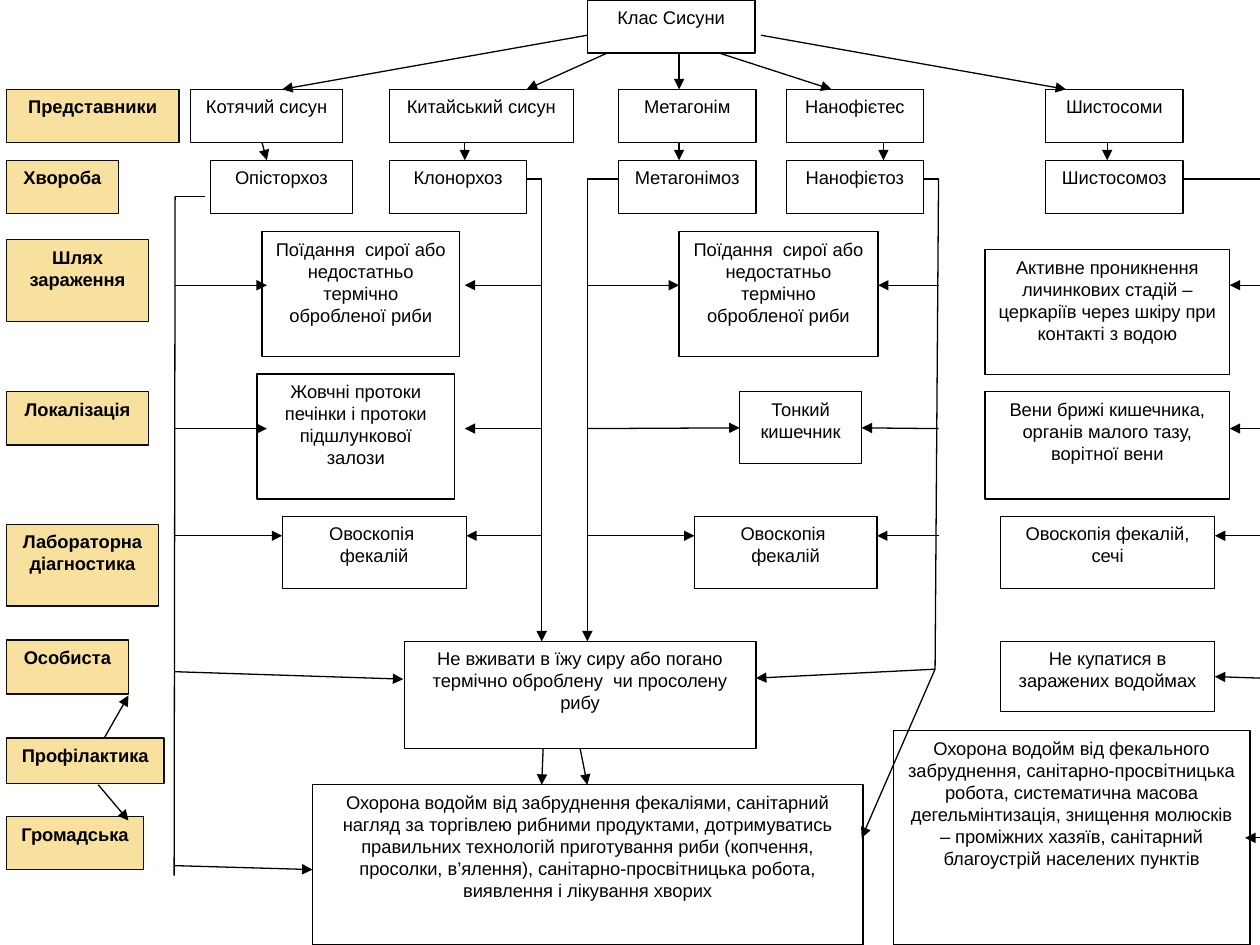
from collections import namedtuple

from lxml import etree
from pptx import Presentation
from pptx import util as u
from pptx.dml import color
from pptx.enum import shapes, text
from pptx.oxml import ns

COLORS = {"paper": "FFFFFF", "label": "F8E19F", "label_line": "0D0D0D", "ink": "000000"}
LINE_WIDTH = u.Pt(0.75)
Box = namedtuple("Box", "left top width height")
Row = namedtuple("Row", "left top width height caption axis tip_left tip_right")


def rgb(name):
    return color.RGBColor.from_string(COLORS[name])


def add_card(page, box, left, top, width, height, caption, label=False):
    card = page.shapes.add_shape(
        shapes.MSO_SHAPE.RECTANGLE,
        u.Cm(box.left + left), u.Cm(box.top + top), u.Cm(width), u.Cm(height))
    card.shadow.inherit = False
    card.fill.solid()
    card.fill.fore_color.rgb = rgb("label" if label else "paper")
    card.line.color.rgb = rgb("label_line" if label else "ink")
    card.line.width = LINE_WIDTH
    frame = card.text_frame
    frame.text = caption
    frame.word_wrap = True
    frame.vertical_anchor = text.MSO_ANCHOR.TOP
    para = frame.paragraphs[0]
    para.alignment = text.PP_ALIGN.CENTER
    for span in para.runs:
        span.font.name = "Arial"
        span.font.size = u.Pt(10.5)
        span.font.bold = label
        span.font.color.rgb = rgb("ink")
    return card


def add_line(page, box, x1, y1, x2, y2, arrow=True):
    line = page.shapes.add_connector(
        shapes.MSO_CONNECTOR.STRAIGHT,
        u.Cm(box.left + x1), u.Cm(box.top + y1), u.Cm(box.left + x2), u.Cm(box.top + y2))
    line.line.color.rgb = rgb("ink")
    line.line.width = LINE_WIDTH
    if arrow:
        stroke = line.line._get_or_add_ln()
        etree.SubElement(stroke, ns.qn("a:tailEnd"), type="triangle")
    etree.SubElement(line._element.spPr, ns.qn("a:effectLst"))
    return line


def draw_header(page, box):
    add_card(page, box, 11.84, 0, 3.38, 1.07, "Клас Сисуни")
    species = [(3.84, 3.07, "Котячий сисун"), (7.85, 3.71, "Китайський сисун"),
               (12.47, 2.77, "Метагонім"), (15.85, 2.77, "Нанофієтес"),
               (21.08, 2.77, "Шистосоми")]
    diseases = [(4.24, 2.87, "Опісторхоз"), (7.85, 2.77, "Клонорхоз"),
                (12.47, 2.77, "Метагонімоз"), (15.85, 2.77, "Нанофієтоз"),
                (21.08, 2.77, "Шистосомоз")]
    for top, cards in ((1.8, species), (3.23, diseases)):
        for left, width, caption in cards:
            add_card(page, box, left, top, width, 1.07, caption)
    for x1, y1, x2 in ((11.84, 0.71, 5.69), (12.24, 1.07, 10.62), (13.69, 1.07, 13.69),
                       (14.5, 1.07, 16.76), (15.34, 0.71, 21.49)):
        add_line(page, box, x1, y1, x2, 1.8)
    for x1, x2 in ((5.28, 5.38), (9.37, 9.37), (13.69, 13.69), (17.81, 17.81), (22.32, 22.32)):
        add_line(page, box, x1, 2.87, x2, 3.23)


def draw_labels(page, box):
    labels = [(0, 3.48, 1.07, "Представники"), (1.43, 2.26, 1.07, "Хвороба"),
              (3.03, 2.87, 1.65, "Шлях зараження"), (6.1, 2.87, 1.07, "Локалізація"),
              (8.77, 3.07, 1.65, "Лабораторна діагностика"), (11.1, 2.46, 1.09, "Особиста"),
              (13.08, 3.18, 0.91, "Профілактика"), (14.66, 2.77, 1.07, "Громадська")]
    for top, width, height, caption in labels:
        add_card(page, box, 0, top, width, height, caption, label=True)
    add_line(page, box, 1.97, 13.08, 2.46, 12.22)
    add_line(page, box, 1.85, 14.02, 2.46, 14.74)


def draw_branch(page, box, rows):
    for row in rows:
        card = add_card(page, box, *row[:5])
        centred = abs(row.top + row.height / 2 - row.axis) < 0.05
        sides = ((0, row.tip_left, row.left, 1),
                 (box.width, row.tip_right, row.left + row.width, 3))
        for start, tip, edge, site in sides:
            if tip is None:
                continue
            arrow = add_line(page, box, start, row.axis, tip, row.axis)
            if centred and abs(tip - edge) < 0.01:
                arrow.end_connect(card, site)


def draw_prevention(page, box):
    advice = add_card(page, box, 4.62, 9.32, 7.09, 2.16,
                      "Не вживати в їжу сиру або погано термічно оброблену  чи просолену рибу")
    add_card(page, box, 2.77, 12.21, 11.1, 3.23,
             "Охорона водойм від забруднення фекаліями, санітарний нагляд за торгівлею "
             "рибними продуктами, дотримуватись правильних технологій приготування риби "
             "(копчення, просолки, в’ялення), санітарно-просвітницька робота, виявлення "
             "і лікування хворих")
    trunks = [(0, 0.35, -0.02, 14.04), (0, 0.35, 0.61, 0.35), (7.09, 0, 7.39, 0),
              (8.31, 0, 8.92, 0), (15.09, 0, 15.39, 0), (15.39, 0, 15.32, 9.88),
              (20.32, 0, 21.87, 0)]
    arrows = [(7.39, 0, 7.39, 9.32), (8.31, 0, 8.31, 9.32), (15.32, 9.88, 11.71, 10.06),
              (15.32, 9.88, 13.84, 13.28), (-0.02, 9.93, 4.6, 10.08),
              (-0.02, 13.84, 2.77, 13.92), (7.42, 11.48, 7.39, 12.21)]
    for ends in trunks:
        add_line(page, box, *ends, arrow=False)
    for ends in arrows:
        add_line(page, box, *ends)
    add_line(page, box, 8.17, 11.48, 8.31, 12.21).begin_connect(advice, 2)


def main():
    deck = Presentation()
    deck.slide_width, deck.slide_height = u.Cm(25.4), u.Cm(19.05)
    page = deck.slides.add_slide(deck.slide_layouts[6])
    raw_fish = "Поїдання  сирої або недостатньо термічно обробленої риби"
    ovoscopy = "Овоскопія  фекалій"
    entry, site, test, personal, public = 2.14, 5.03, 7.19, 10.06, 13.28
    liver_flukes = [
        Row(1.75, 1.06, 3.99, 2.52, raw_fish, entry, 1.85, 5.84),
        Row(1.65, 3.93, 3.99, 2.52, "Жовчні протоки печінки і протоки підшлункової залози",
            site, 1.85, 5.84),
        Row(2.16, 6.8, 3.71, 1.45, ovoscopy, test, 2.16, 5.87)]
    gut_flukes = [
        Row(1.85, 1.06, 4.01, 2.52, raw_fish, entry, 1.85, 5.86),
        Row(3.07, 4.29, 2.46, 1.45, "Тонкий кишечник", site, 3.07, 5.53),
        Row(2.16, 6.8, 3.68, 1.45, ovoscopy, test, 2.16, 5.84)]
    blood_flukes = [
        Row(1.85, 1.42, 4.93, 2.52, "Активне проникнення личинкових стадій – церкаріїв "
            "через шкіру при контакті з водою", entry, None, 6.78),
        Row(1.85, 4.29, 4.93, 2.16, "Вени брижі кишечника, органів малого тазу, ворітної вени",
            site, None, 6.78),
        Row(2.16, 6.8, 4.32, 1.45, "Овоскопія фекалій, сечі", test, None, 6.48),
        Row(2.16, 9.32, 4.32, 1.42, "Не купатися в заражених водоймах", personal, None, 6.48),
        Row(0, 11.12, 7.19, 4.32, "Охорона водойм від фекального забруднення, "
            "санітарно-просвітницька робота, систематична масова дегельмінтизація, "
            "знищення молюсків – проміжних хазяїв, санітарний благоустрій населених пунктів",
            public, None, 7.09)]
    draw_header(page, Box(0, 0, 25.4, 4.3))
    draw_labels(page, Box(0.13, 1.8, 3.48, 15.73))
    draw_branch(page, Box(3.53, 3.61, 7.39, 8.25), liver_flukes)
    draw_branch(page, Box(11.84, 3.61, 7.08, 8.25), gut_flukes)
    draw_branch(page, Box(18.01, 3.61, 7.39, 15.44), blood_flukes)
    draw_prevention(page, Box(3.53, 3.61, 21.87, 15.44))
    deck.save("out.pptx")


if __name__ == "__main__":
    main()
